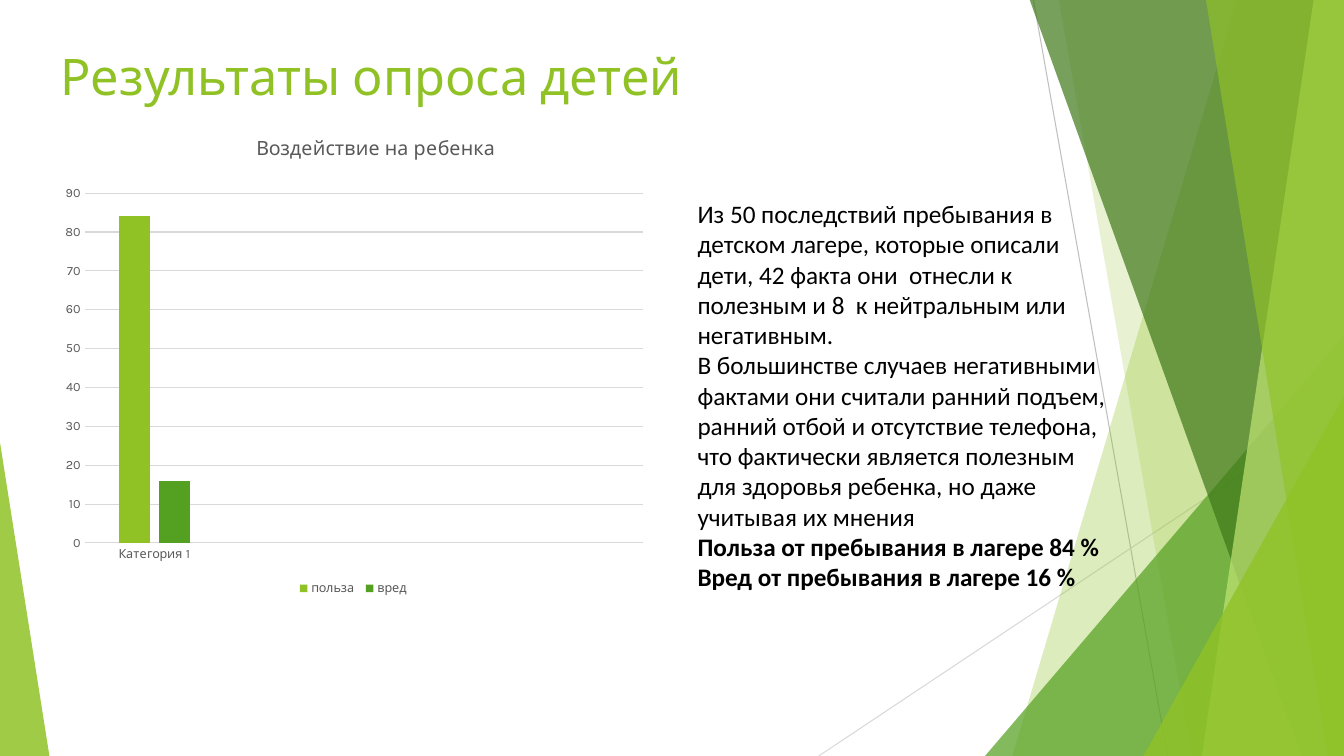
from lxml import etree
from pptx import Presentation
from pptx import util as u
from pptx.chart.data import CategoryChartData
from pptx.dml.color import RGBColor
from pptx.enum import chart as charts, shapes, text
from pptx.oxml import parse_xml
from pptx.oxml.ns import nsdecls, qn

WIDTH, HEIGHT, TOP = 13.33, 7.5, -0.01
LIME, GREEN, GRAY, PALE_GRAY = "90C226", "54A021", "595959", "D9D9D9"


def color(value):
    return RGBColor.from_string(value)


class SurveySlide:
    heading_font = "Karla"
    body_font = "Calibri"

    def __init__(self, presentation):
        self.slide = presentation.slides.add_slide(presentation.slide_layouts[5])

    def style(self, font, name, size, value, bold=False):
        font.name = name
        font.size = u.Pt(size)
        font.bold = bold
        font.color.rgb = color(value)

    def paint(self, shape, value, opacity):
        shape.shadow.inherit = False
        shape.line.fill.background()
        shape.fill.solid()
        shape.fill.fore_color.rgb = color(value)
        fill_color = shape._element.spPr.find(qn("a:solidFill")).find(qn("a:srgbClr"))
        etree.SubElement(fill_color, qn("a:alpha"), val=str(opacity * 1000))

    def line(self, start, end, value):
        ends = [u.Inches(length) for length in (*start, *end)]
        connector = self.slide.shapes.add_connector(shapes.MSO_CONNECTOR.STRAIGHT, *ends)
        connector.line.color.rgb = color(value)
        connector.line.width = u.Pt(0.75)
        etree.SubElement(connector._element.spPr, qn("a:effectLst"))

    def band(self, top_left, bottom_left, value, opacity):
        corners = [(top_left, TOP), (WIDTH, TOP), (WIDTH, HEIGHT), (bottom_left, HEIGHT)]
        points = [(u.Inches(x), u.Inches(y)) for x, y in corners]
        builder = self.slide.shapes.build_freeform(*points[0])
        builder.add_line_segments(points[1:], close=True)
        self.paint(builder.convert_to_shape(), value, opacity)

    def triangle(self, left, top, width, apex, value, opacity):
        box = [u.Inches(length) for length in (left, top, width, HEIGHT - top)]
        shape = self.slide.shapes.add_shape(shapes.MSO_SHAPE.ISOSCELES_TRIANGLE, *box)
        shape.adjustments[0] = apex
        self.paint(shape, value, opacity)

    def title(self, wording, left, top, width, height):
        shape = self.slide.shapes.title
        shape.left, shape.top = u.Inches(left), u.Inches(top)
        shape.width, shape.height = u.Inches(width), u.Inches(height)
        frame = shape.text_frame
        frame.text = wording
        frame.vertical_anchor = text.MSO_ANCHOR.MIDDLE
        paragraph = frame.paragraphs[0]
        paragraph.alignment = text.PP_ALIGN.LEFT
        paragraph.line_spacing = 0.9
        self.style(paragraph.runs[0].font, self.heading_font, 36, LIME)

    def body(self, paragraphs, left, top, width, height):
        box = [u.Inches(length) for length in (left, top, width, height)]
        frame = self.slide.shapes.add_textbox(*box).text_frame
        frame.word_wrap = True
        frame.auto_size = text.MSO_AUTO_SIZE.SHAPE_TO_FIT_TEXT
        frame.text = "\n".join(wording for wording, bold in paragraphs)
        for paragraph, (wording, bold) in zip(frame.paragraphs, paragraphs):
            self.style(paragraph.runs[0].font, self.body_font, 18, "000000", bold)

    def layout(self, parent, **places):
        for old in parent.findall(qn("c:layout")):
            parent.remove(old)
        inner = '<c:layoutTarget val="inner"/>' if "w" in places else ""
        modes = '<c:xMode val="edge"/><c:yMode val="edge"/>'
        values = "".join(f'<c:{key} val="{place}"/>' for key, place in places.items())
        return parse_xml(f'<c:layout {nsdecls("c")}><c:manualLayout>{inner}{modes}{values}'
                         '</c:manualLayout></c:layout>')

    def columns(self, heading, categories, series, left, top, width, height):
        data = CategoryChartData()
        data.categories = categories
        for name, values, value in series:
            data.add_series(name, values)
        box = [u.Inches(length) for length in (left, top, width, height)]
        chart = self.slide.shapes.add_chart(
            charts.XL_CHART_TYPE.COLUMN_CLUSTERED, *box, data).chart
        self.style(chart.font, self.heading_font, 10, "000000")

        chart.has_title = True
        title = chart.chart_title
        title.text_frame.text = heading
        self.style(title.text_frame.paragraphs[0].runs[0].font, self.heading_font, 14, GRAY)
        title.include_in_layout = False
        title_element = title._element
        title_layout = self.layout(title_element, x=0.33, y=0.01)
        title_element.find(qn("c:tx")).addnext(title_layout)

        plot = chart.plots[0]
        plot.gap_width, plot.overlap = 219, -27
        plot.vary_by_categories = False
        for column, (name, values, value) in zip(plot.series, series):
            column.format.fill.solid()
            column.format.fill.fore_color.rgb = color(value)
        area = chart._chartSpace.chart.plotArea
        for point in area.xpath(".//c:cat//c:pt[not(c:v/text())]"):
            point.getparent().remove(point)
        area.insert(0, self.layout(area, x=0.05, y=0.14, w=0.93, h=0.74))

        for axis in (chart.category_axis, chart.value_axis):
            axis.major_tick_mark = axis.minor_tick_mark = charts.XL_TICK_MARK.NONE
            self.style(axis.tick_labels.font, self.heading_font, 9, GRAY)
        chart.value_axis.minimum_scale, chart.value_axis.maximum_scale = 0, 90
        chart.value_axis.major_unit = 10
        chart.value_axis.format.line.fill.background()
        for line in (chart.category_axis.format.line,
                     chart.value_axis.major_gridlines.format.line):
            line.color.rgb = color(PALE_GRAY)
            line.width = u.Pt(0.75)

        chart.has_legend = True
        chart.legend.position = charts.XL_LEGEND_POSITION.BOTTOM
        chart.legend.include_in_layout = False
        self.style(chart.legend.font, self.heading_font, 9, GRAY)


def main():
    presentation = Presentation()
    presentation.slide_width = u.Inches(WIDTH)
    presentation.slide_height = u.Inches(HEIGHT)
    survey = SurveySlide(presentation)

    survey.line((10.25, 0), (11.58, HEIGHT), "BFBFBF")
    survey.line((WIDTH, 4.03), (8.12, HEIGHT), PALE_GRAY)
    survey.band(12.27, 10.04, LIME, 30)
    survey.band(10.5, 11.82, LIME, 20)
    survey.triangle(9.77, 3.33, 3.56, 1, GREEN, 72)
    survey.band(10.21, 12.91, "3F7819", 70)
    survey.band(13.03, 11.92, "C0E474", 70)
    survey.band(11.96, 13.17, LIME, 65)
    survey.triangle(11.34, 3.93, 1.99, 1, LIME, 80)
    survey.triangle(0, 4.39, 0.49, 0, LIME, 85)

    survey.title("Результаты опроса детей", 0.5, 0.4, 9.4, 0.77)
    survey.columns(
        "Воздействие на ребенка",
        ["Категория 1", "", "", ""],
        [("польза ", (84, None, None, None), LIME),
         ("вред ", (16, None, None, None), GREEN),
         ("Столбец1", (), "E6B91E")],
        0.54, 1.26, 5.96, 4.69)
    survey.body([
        ("Из 50 последствий пребывания в детском лагере, которые описали дети, "
         "42 факта они  отнесли к полезным и 8  к нейтральным или негативным.", False),
        ("В большинстве случаев негативными фактами они считали ранний подъем, "
         "ранний отбой и отсутствие телефона, что фактически является полезным "
         "для здоровья ребенка, но даже учитывая их мнения", False),
        ("Польза от пребывания в лагере 84 %", True),
        ("Вред от пребывания в лагере 16 %", True),
    ], 6.82, 1.92, 4.33, 4.04)
    presentation.save("out.pptx")


if __name__ == "__main__":
    main()
